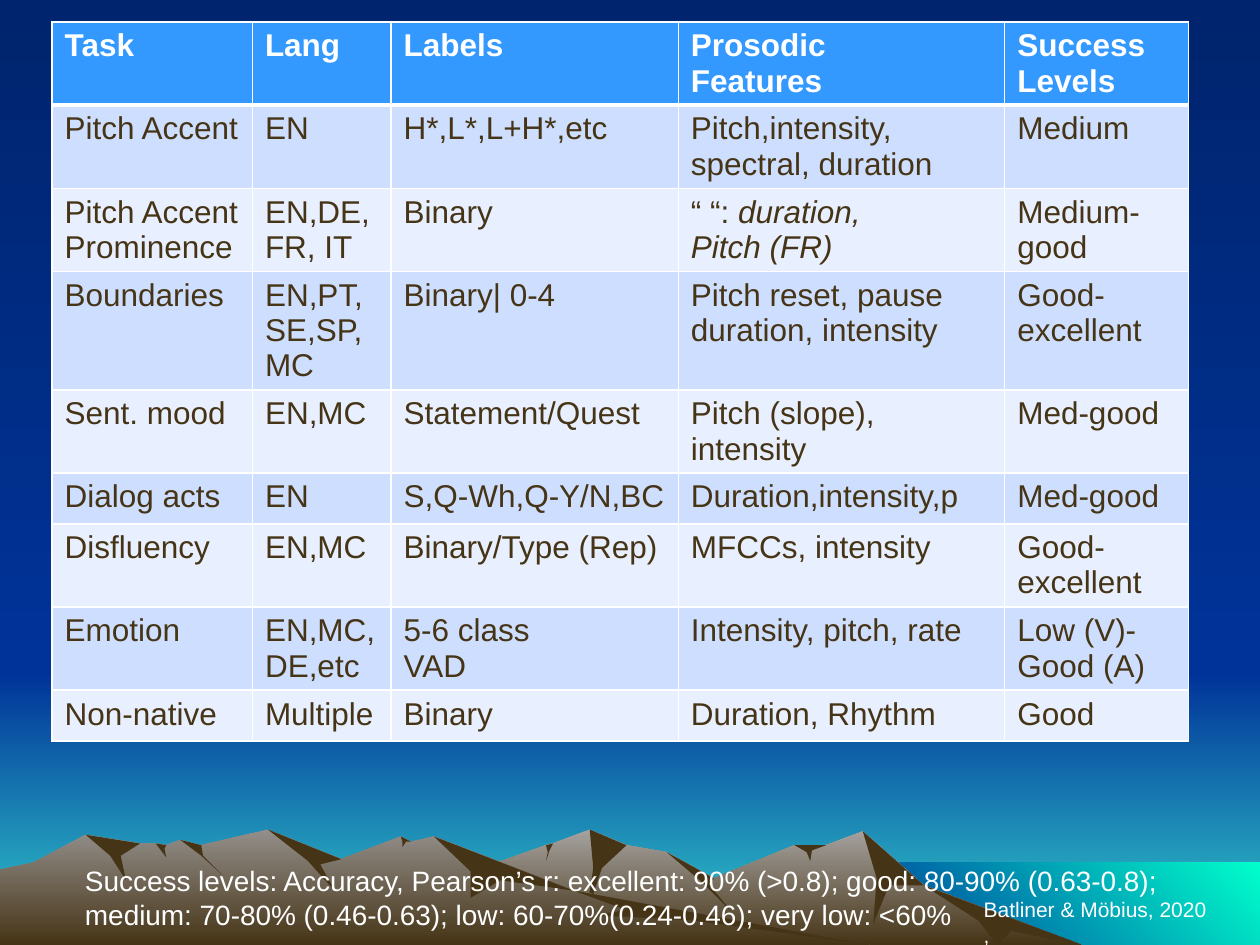
"""Build a slide with a table of prosody tasks above a mountain landscape."""
from dataclasses import dataclass
from lxml.etree import SubElement
from pptx import Presentation
from pptx.dml.color import RGBColor
from pptx.enum.shapes import MSO_SHAPE
from pptx.oxml.ns import qn
from pptx.util import Pt

PAGE_WIDTH, PAGE_HEIGHT = 720, 540
HORIZON = 384
SEA_LEFT, SEA_TOP = 492, 493

NIGHT = ("00246D", "003399", 90)
SKY = ("003399", "33CCCC", 90)
SEA = ("003399", "00FFCC", 315)
EARTH = "463416"
RIGHT_SLOPE = ("A5A29F", EARTH, 90)
LEFT_SLOPE = ("938F8B", EARTH, 90)
WHITE = "FFFFFF"
HEADER_FILL = "3399FF"
BAND_FILLS = ["E8EFFF", "CEDEFF"]


@dataclass
class Peak:
    """A summit, the saddle to its right and the foot of its shaded face, as (x, rise)."""
    summit: tuple
    saddle: tuple
    foot: tuple

    def shaded_face(self):
        fold = between(between(self.saddle, self.foot, 0.5), self.summit, 0.25)
        notch = between(between(self.summit, self.foot, 0.5), self.saddle, 0.15)
        return [self.summit, self.saddle, fold, self.foot, notch]


RIGHT_APPROACH = [(186, 0), (235, 30), (284, 47)]
RIGHT_PEAKS = [
    Peak(summit=(312, 57), saddle=(316, 58), foot=(312, 48)),
    Peak(summit=(337, 66), saddle=(358, 57), foot=(335, 17)),
    Peak(summit=(381, 53), saddle=(408, 38), foot=(418, 19)),
    Peak(summit=(454, 57), saddle=(472, 57), foot=(463, 48)),
    Peak(summit=(493, 65), saddle=(528, 34), foot=(499, 12)),
    Peak(summit=(528, 34), saddle=(618, 0), foot=(570, 0))]
LEFT_APPROACH = [(0, 0), (0, 43), (19, 47)]
LEFT_PEAKS = [
    Peak(summit=(49, 63), saddle=(80, 58), foot=(72, 37)),
    Peak(summit=(89, 58), saddle=(95, 57), foot=(95, 50)),
    Peak(summit=(103, 60), saddle=(115, 57), foot=(127, 40)),
    Peak(summit=(153, 66), saddle=(195, 49), foot=(192, 30)),
    Peak(summit=(229, 62), saddle=(235, 59), foot=(230, 56)),
    Peak(summit=(248, 62), saddle=(328, 31), foot=(269, 27)),
    Peak(summit=(328, 31), saddle=(497, 0), foot=(340, 17))]

COLUMN_WIDTHS = [114.5, 79.2, 164.2, 186.5, 105.1]
ROW_HEIGHTS = {1: 29, 2: 47.5, 3: 67.5}
ROW_LINES = [2, 2, 2, 3, 2, 1, 2, 2, 1]
TASKS = [
    ["Task", "Lang", "Labels", "Prosodic\nFeatures", "Success\nLevels"],
    ["Pitch Accent", "EN", "H*,L*,L+H*,etc", "Pitch,intensity, spectral, duration", "Medium"],
    ["Pitch Accent\nProminence", "EN,DE, FR, IT", "Binary",
     "“ “: _duration,_\n_Pitch (FR)_", "Medium-\ngood"],
    ["Boundaries", "EN,PT,SE,SP,MC", "Binary| 0-4",
     "Pitch reset, pause duration, intensity", "Good-\nexcellent"],
    ["Sent. mood", "EN,MC", "Statement/Quest", "Pitch (slope), intensity", "Med-good"],
    ["Dialog acts", "EN", "S,Q-Wh,Q-Y/N,BC", "Duration,intensity,p", "Med-good"],
    ["Disfluency", "EN,MC", "Binary/Type (Rep)", "MFCCs, intensity", "Good-\nexcellent"],
    ["Emotion", "EN,MC,DE,etc", "5-6 class\nVAD", "Intensity, pitch, rate",
     "Low (V)-Good (A)"],
    ["Non-native", "Multiple", "Binary", "Duration, Rhythm", "Good"]]
LEVELS_NOTE = (
    "Success levels: Accuracy, Pearson’s r: excellent: 90% (>0.8); good: 80-90% (0.63-0.8);\n"
    "medium: 70-80% (0.46-0.63); low: 60-70%(0.24-0.46); very low: <60%")


def between(start, end, share):
    return tuple(a + (b - a) * share for a, b in zip(start, end))


def color(value):
    return RGBColor.from_string(value)


def paint(fill, value):
    if isinstance(value, str):
        fill.solid()
        fill.fore_color.rgb = color(value)
        return
    start, end, angle = value
    fill.gradient()
    fill.gradient_angle = 360 - angle
    for stop, shade in zip(fill.gradient_stops, (start, end)):
        stop.color.rgb = color(shade)


def write(frame, text, size=18, ink=EARTH, bold=False, font="Arial"):
    """Write one paragraph a line, with the words between underscores in italics."""
    for index, line in enumerate(text.split("\n")):
        para = frame.add_paragraph() if index else frame.paragraphs[0]
        for position, piece in enumerate(line.split("_")):
            if piece:
                span = para.add_run()
                span.text = piece
                span.font.name = font
                span.font.size = Pt(size)
                span.font.bold = bold
                span.font.italic = position % 2 == 1
                span.font.color.rgb = color(ink)


def border(cell, top, bottom):
    properties = cell._tc.get_or_add_tcPr()
    for side, width in (("L", 1), ("R", 1), ("T", top), ("B", bottom)):
        line = SubElement(properties, qn("a:ln" + side), w=str(Pt(width)))
        SubElement(SubElement(line, qn("a:solidFill")), qn("a:srgbClr"), val=WHITE)


class Painter:
    """Holds the current slide and its style, and draws each kind of element."""

    def __init__(self, slide, header_fill=HEADER_FILL, band_fills=BAND_FILLS):
        self.slide = slide
        self.header_fill = header_fill
        self.band_fills = band_fills

    def finish(self, shape, fill):
        paint(shape.fill, fill)
        shape.line.fill.background()
        shape.shadow.inherit = False

    def rectangle(self, left, top, right, bottom, fill):
        box = self.slide.shapes.add_shape(
            MSO_SHAPE.RECTANGLE, Pt(left), Pt(top), Pt(right - left), Pt(bottom - top))
        self.finish(box, fill)

    def polygon(self, points, fill):
        corners = [(x, PAGE_HEIGHT - rise) for x, rise in points]
        builder = self.slide.shapes.build_freeform(*corners[0], scale=float(Pt(1)))
        builder.add_line_segments(corners[1:], close=True)
        self.finish(builder.convert_to_shape(), fill)

    def ridge(self, approach, peaks, fill):
        skyline = [point for peak in peaks for point in (peak.summit, peak.saddle)]
        self.polygon(approach + skyline, fill)
        for peak in peaks:
            self.polygon(peak.shaded_face(), EARTH)

    def text(self, left, top, width, height, text, size):
        box = self.slide.shapes.add_textbox(Pt(left), Pt(top), Pt(width), Pt(height))
        box.text_frame.word_wrap = True
        write(box.text_frame, text, size=size, ink=WHITE)

    def table(self, left, top, rows, widths, heights):
        table = self.slide.shapes.add_table(
            len(rows), len(widths), Pt(left), Pt(top), Pt(sum(widths)), Pt(sum(heights))).table
        for column, width in zip(table.columns, widths):
            column.width = Pt(width)
        for index, (row, texts, height) in enumerate(zip(table.rows, rows, heights)):
            header = index == 0
            row.height = Pt(height)
            for cell, text in zip(row.cells, texts):
                border(cell, top=3 if index == 1 else 1, bottom=3 if header else 1)
                paint(cell.fill, self.header_fill if header else self.band_fills[index % 2])
                write(cell.text_frame, text, ink=WHITE if header else EARTH, bold=header)


def main():
    deck = Presentation()
    deck.slide_width, deck.slide_height = Pt(PAGE_WIDTH), Pt(PAGE_HEIGHT)
    page = deck.slides.add_slide(deck.slide_layouts[6])
    paint(page.background.fill, NIGHT)
    painter = Painter(page)
    painter.rectangle(0, HORIZON, PAGE_WIDTH, PAGE_HEIGHT, SKY)
    painter.rectangle(0, 0, PAGE_WIDTH, HORIZON, NIGHT)
    painter.rectangle(SEA_LEFT, SEA_TOP, PAGE_WIDTH, PAGE_HEIGHT, SEA)
    painter.ridge(RIGHT_APPROACH, RIGHT_PEAKS, RIGHT_SLOPE)
    painter.ridge(LEFT_APPROACH, LEFT_PEAKS, LEFT_SLOPE)
    heights = [ROW_HEIGHTS[lines] for lines in ROW_LINES]
    painter.table(29.75, 12.5, TASKS, COLUMN_WIDTHS, heights)
    painter.text(555, 509, 146, 36, "Batliner & Möbius, 2020\n,", size=12)
    painter.text(41.5, 490, 637, 46, LEVELS_NOTE, size=16)
    deck.save("out.pptx")


if __name__ == "__main__":
    main()
